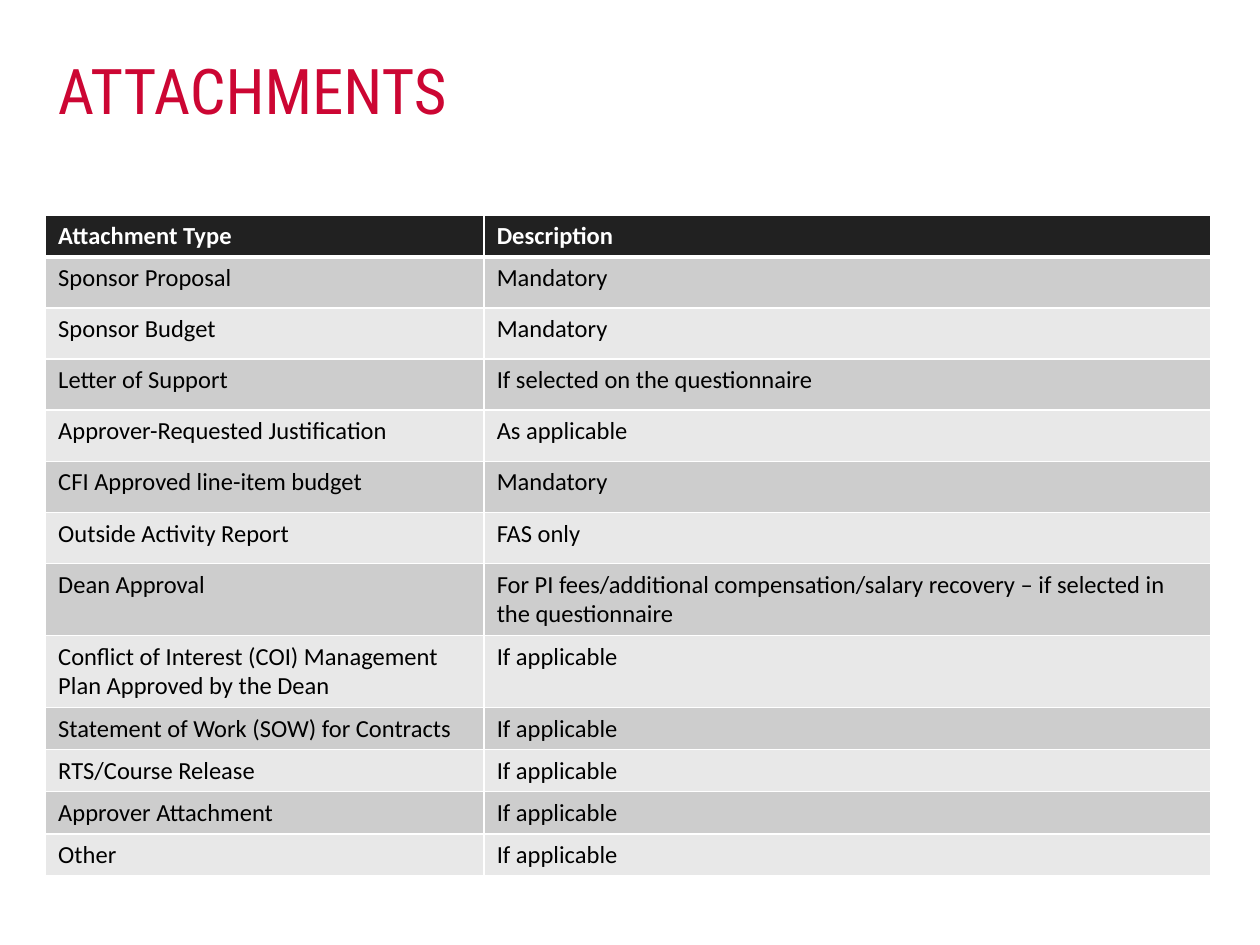
from lxml import etree
from pptx import Presentation
from pptx.dml.color import RGBColor
from pptx.enum.text import MSO_ANCHOR
from pptx.oxml.ns import qn
from pptx.util import Cm, Pt

TOP = MSO_ANCHOR.TOP
ATTACHMENTS = [
    ("Attachment Type", "Description"),
    ("Sponsor Proposal", "Mandatory"),
    ("Sponsor Budget", "Mandatory"),
    ("Letter of Support", "If selected on the questionnaire"),
    ("Approver-Requested Justification", "As applicable"),
    ("CFI Approved line-item budget", "Mandatory"),
    ("Outside Activity Report", "FAS only"),
    ("Dean Approval",
     "For PI fees/additional compensation/salary recovery – if selected in the questionnaire"),
    ("Conflict of Interest (COI) Management Plan Approved by the Dean", "If applicable"),
    ("Statement of Work (SOW) for Contracts", "If applicable"),
    ("RTS/Course Release", "If applicable"),
    ("Approver Attachment", "If applicable"),
    ("Other", "If applicable"),
]
COLUMN_WIDTHS = [8.84, 14.64]
ROW_HEIGHTS = [0.85] + [1.03] * 6 + [1.45] * 2 + [0.85] * 4


def color(value):
    return RGBColor.from_string(value)


class SlideBuilder:
    """Holds the slide style and draws each kind of element on the current slide."""

    title_font, title_size, title_color = "Roboto Condensed", 36, "CC0633"
    table_font, table_size = "Calibri", 14
    header_fill, band_fills = "212121", ("CDCDCD", "E8E8E8")
    header_color, body_color, border_color = "FFFFFF", "000000", "FFFFFF"

    def __init__(self, slide):
        self.slide = slide

    def style(self, paragraph, name, size, value, bold=False):
        for run in paragraph.runs:
            run.font.name = name
            run.font.size = Pt(size)
            run.font.bold = bold
            run.font.color.rgb = color(value)

    def title(self, text, left, top, width, height):
        shape = self.slide.shapes.add_textbox(Cm(left), Cm(top), Cm(width), Cm(height))
        frame = shape.text_frame
        frame.word_wrap = True
        frame.vertical_anchor = TOP
        frame.margin_top = Cm(0.19)
        frame.text = text
        paragraph = frame.paragraphs[0]
        paragraph.line_spacing = 0.9
        self.style(paragraph, self.title_font, self.title_size, self.title_color)

    def borders(self, cell, bottom):
        properties = cell._tc.get_or_add_tcPr()
        widths = {"a:lnL": 1, "a:lnR": 1, "a:lnT": 1, "a:lnB": bottom}
        for position, (tag, width) in enumerate(widths.items()):
            line = etree.Element(qn(tag), w=str(Pt(width)))
            fill = etree.SubElement(line, qn("a:solidFill"))
            etree.SubElement(fill, qn("a:srgbClr"), val=self.border_color)
            properties.insert(position, line)

    def cell(self, cell, text, row):
        header = row == 0
        cell.text = text
        cell.fill.solid()
        cell.fill.fore_color.rgb = color(
            self.header_fill if header else self.band_fills[(row - 1) % 2])
        self.style(cell.text_frame.paragraphs[0], self.table_font, self.table_size,
                   self.header_color if header else self.body_color, header)
        self.borders(cell, 3 if header else 1)

    def table(self, rows, left, top, widths, heights):
        table = self.slide.shapes.add_table(
            len(rows), len(widths), Cm(left), Cm(top), Cm(sum(widths)), Cm(sum(heights))).table
        for column, width in zip(table.columns, widths):
            column.width = Cm(width)
        for index, (texts, height) in enumerate(zip(rows, heights)):
            table.rows[index].height = Cm(height)
            for cell, text in zip(table.rows[index].cells, texts):
                self.cell(cell, text, index)


def main():
    presentation = Presentation()
    presentation.slide_width, presentation.slide_height = Cm(25.4), Cm(19.05)
    builder = SlideBuilder(presentation.slides.add_slide(presentation.slide_layouts[6]))
    builder.title("ATTACHMENTS", 0.92, 1.02, 23.9, 1.93)
    builder.table(ATTACHMENTS, 0.92, 4.33, COLUMN_WIDTHS, ROW_HEIGHTS)
    presentation.save("out.pptx")


if __name__ == "__main__":
    main()
